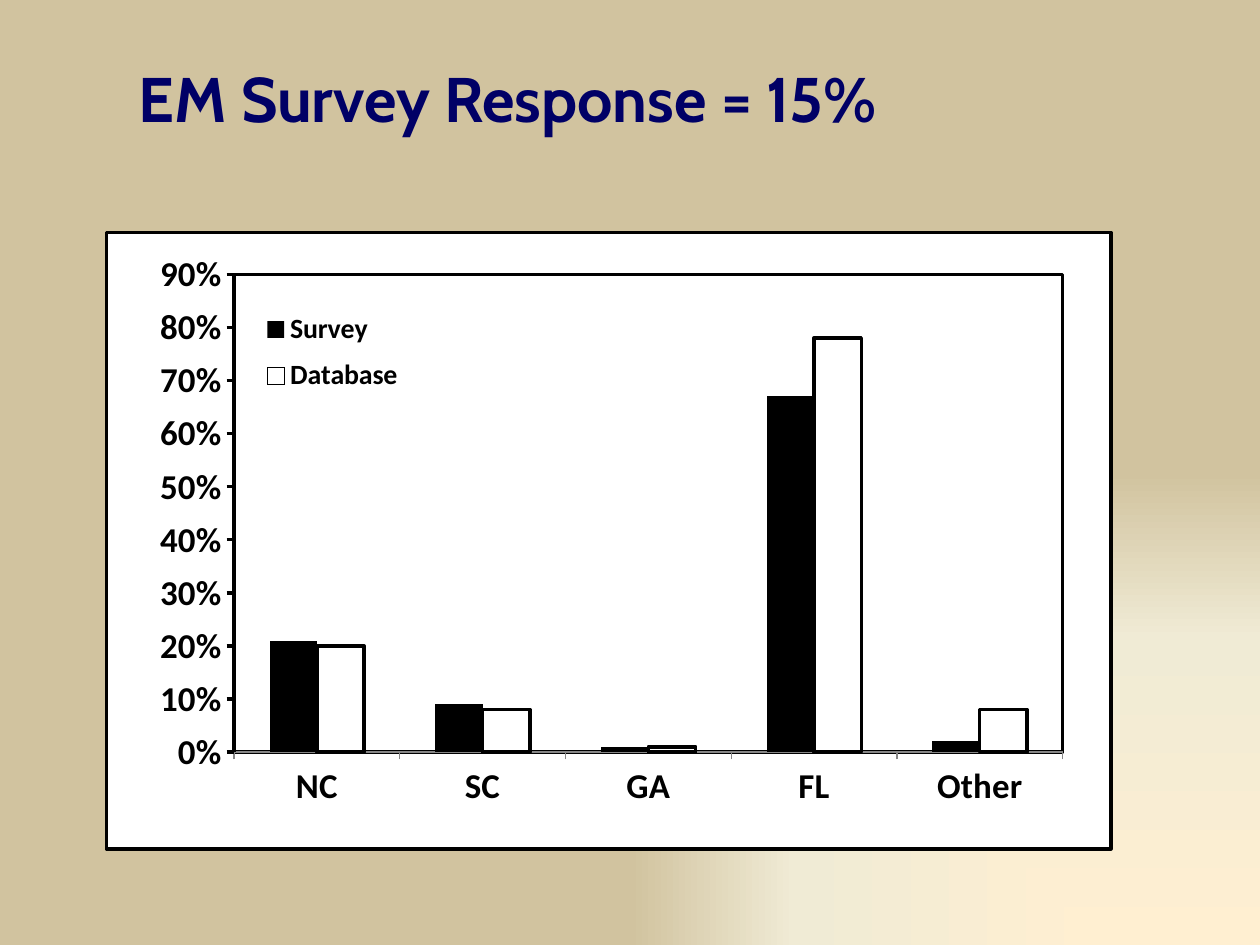
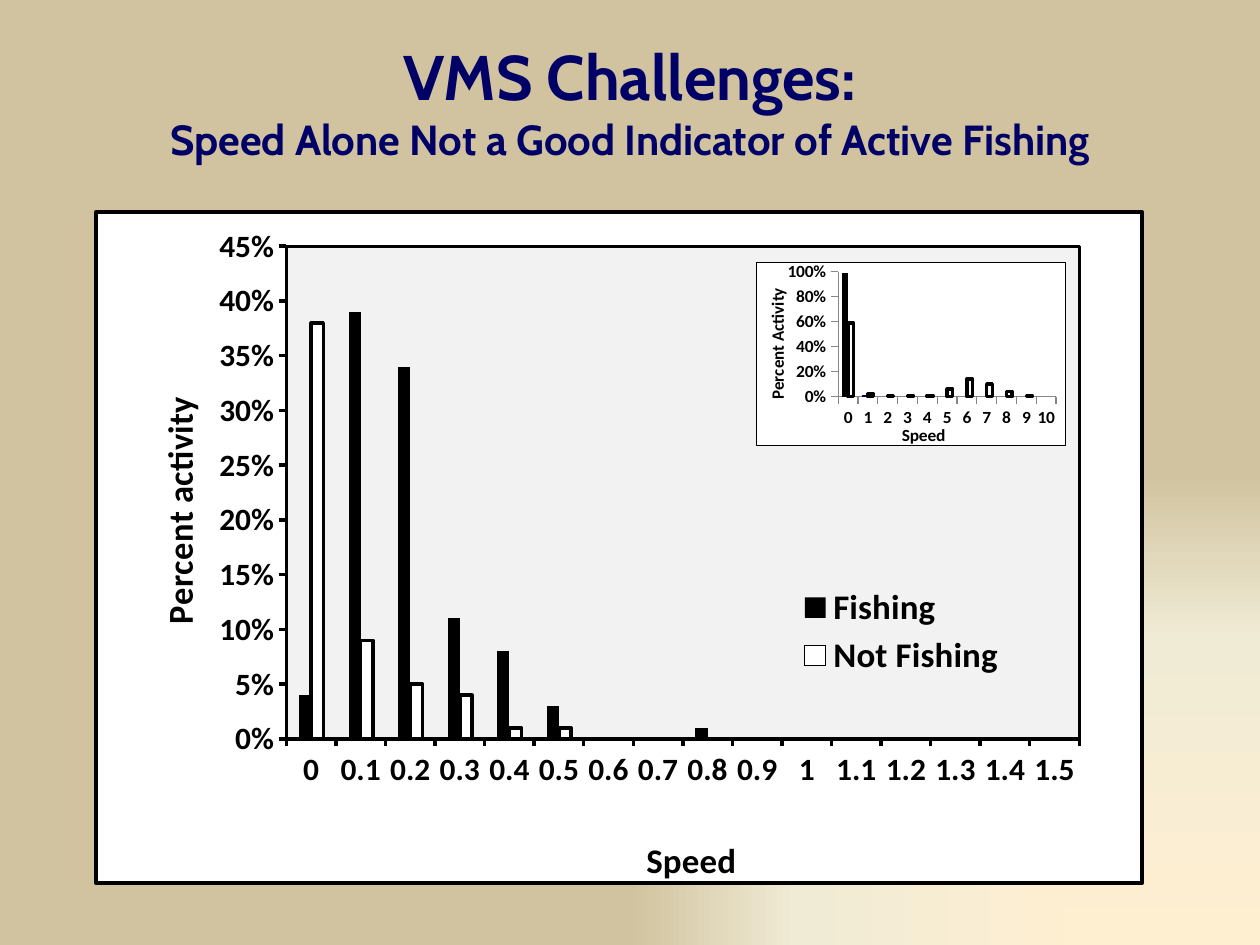
from pptx import Presentation, oxml
from pptx.chart import data as chart_data
from pptx.dml import color
from pptx.enum import chart as kinds, text
from pptx.oxml import ns
from pptx.util import Cm, Pt

COLOURS = {
    "navy": "000066", "black": "000000", "white": "FFFFFF", "plot": "F2F2F2",
    "axis": "868686", "glow": "FFEFD1", "cream": "F0EBD5", "sand": "D1C39F",
}
TITLE_FONT, LABEL_FONT, CHART_FONT = "Cabin", "Calibri", "Cambria"
HEAVY, THIN = 2, 0.75


def rgb(name):
    return color.RGBColor.from_string(COLOURS[name])


def set_font(font, size, name, bold=True, colour="black"):
    font.size, font.name, font.bold = Pt(size), name, bold
    font.color.rgb = rgb(colour)


def set_line(line, colour, width):
    line.color.rgb = rgb(colour)
    line.width = Pt(width)


def frame_xml(fill, width):
    """Shape properties of a chart or plot area with a black border."""
    paint = f'<a:solidFill><a:srgbClr val="{COLOURS[fill]}"/></a:solidFill>'
    border = (f'<a:ln w="{Pt(width)}"><a:solidFill><a:srgbClr val="{COLOURS["black"]}"/>'
              '</a:solidFill></a:ln>' if width else '<a:ln><a:noFill/></a:ln>')
    return oxml.parse_xml(f'<c:spPr {ns.nsdecls("c", "a")}>{paint}{border}</c:spPr>')


def place(element, index, x, y, w=None, h=None, inner=False):
    """Give a chart part a manual layout, in fractions of the chart."""
    for old in element.findall(ns.qn("c:layout")):
        element.remove(old)
    target = '<c:layoutTarget val="inner"/>' if inner else ""
    sizes = f'<c:w val="{w}"/><c:h val="{h}"/>' if w else ""
    element.insert(index, oxml.parse_xml(
        f'<c:layout {ns.nsdecls("c")}><c:manualLayout>{target}'
        '<c:xMode val="edge"/><c:yMode val="edge"/>'
        f'<c:x val="{x}"/><c:y val="{y}"/>{sizes}</c:manualLayout></c:layout>'))


class Deck:
    def __init__(self):
        self.deck = Presentation()
        self.deck.slide_width, self.deck.slide_height = Cm(25.4), Cm(19.05)
        self.page = None
        self.paint_background()

    def paint_background(self):
        master = self.deck.slide_master
        master.background.fill.solid()
        solid = master.element.find(".//" + ns.qn("p:bgPr")).find(ns.qn("a:solidFill"))
        stops = "".join(
            f'<a:gs pos="{place_at * 1000}"><a:srgbClr val="{COLOURS[name]}"/></a:gs>'
            for place_at, name in ((0, "glow"), (65, "cream"), (100, "sand")))
        solid.getparent().replace(solid, oxml.parse_xml(
            f'<a:gradFill {ns.nsdecls("a")} rotWithShape="1"><a:gsLst>{stops}</a:gsLst>'
            '<a:path path="rect"><a:fillToRect l="100000" t="100000"/></a:path></a:gradFill>'))

    def add_page(self, area, lines, align):
        """Start a slide whose title holds (words, size) lines."""
        self.page = self.deck.slides.add_slide(self.deck.slide_layouts[5])
        title = self.page.shapes.title
        title.left, title.top, title.width, title.height = map(Cm, area)
        frame = title.text_frame
        frame.word_wrap = True
        frame.auto_size = text.MSO_AUTO_SIZE.NONE
        frame.vertical_anchor = text.MSO_ANCHOR.TOP
        para = frame.paragraphs[0]
        para.alignment = align
        for number, (words, size) in enumerate(lines):
            if number:
                para.add_line_break()
            span = para.add_run()
            span.text = words
            set_font(span.font, size, TITLE_FONT, colour="navy")

    def add_columns(self, area, categories, series, plot, border=HEAVY,
                    plot_fill="white", plot_border=HEAVY, gap=150, overlap=0):
        """Add a column chart; series are (name, fill, values)."""
        source = chart_data.CategoryChartData(number_format="0%")
        source.categories = categories
        for name, _, values in series:
            source.add_series(name, values + [None] * (len(categories) - len(values)))
        chart = self.page.shapes.add_chart(
            kinds.XL_CHART_TYPE.COLUMN_CLUSTERED, *map(Cm, area), source).chart
        chart.has_title = chart.has_legend = False
        set_font(chart.font, 10, CHART_FONT, bold=False)
        bars = chart.plots[0]
        bars.gap_width, bars.overlap, bars.vary_by_categories = gap, overlap, False
        for column, (_, fill, _) in zip(bars.series, series):
            column.invert_if_negative = False
            column.format.fill.solid()
            column.format.fill.fore_color.rgb = rgb(fill)
            if fill == "white":
                set_line(column.format.line, "black", HEAVY)
        body = chart.element.find(ns.qn("c:chart"))
        body.addnext(frame_xml("white", border))
        plot_area = body.find(ns.qn("c:plotArea"))
        place(plot_area, 0, *plot, inner=True)
        plot_area.append(frame_xml(plot_fill, plot_border))
        return chart

    def style_axis(self, axis, size, line, title=None, title_size=None, title_at=None):
        axis.has_major_gridlines = False
        axis.major_tick_mark = kinds.XL_TICK_MARK.OUTSIDE
        axis.minor_tick_mark = kinds.XL_TICK_MARK.NONE
        set_font(axis.tick_labels.font, size, LABEL_FONT)
        set_line(axis.format.line, *line)
        if title:
            frame = axis.axis_title.text_frame
            frame.text = title
            set_font(frame.paragraphs[0].font, title_size, LABEL_FONT)
            place(axis.axis_title._element, 1, *title_at)

    def scale_axis(self, axis, top, step):
        axis.minimum_scale, axis.maximum_scale, axis.major_unit = 0, top, step
        axis.tick_labels.number_format = "0%"
        axis.tick_labels.number_format_is_linked = False

    def add_legend(self, chart, size, area, overlay):
        chart.has_legend = True
        legend = chart.legend
        legend.position = kinds.XL_LEGEND_POSITION.RIGHT
        legend.include_in_layout = overlay
        set_font(legend.font, size, LABEL_FONT)
        place(legend._element, 1, *area)


def build_survey(show):
    show.add_page((2.54, 1.07, 19.05, 1.7), [("EM Survey Response = 15%", 36)],
                  text.PP_ALIGN.LEFT)
    chart = show.add_columns(
        (2.11, 4.65, 20.32, 12.5), ["NC", "SC", "GA", "FL", "Other"],
        [("Survey", "black", [0.21, 0.09, 0.01, 0.67, 0.02]),
         ("Database", "white", [0.2, 0.08, 0.01, 0.78, 0.08])],
        plot=(0.127, 0.068, 0.825, 0.775))
    show.style_axis(chart.category_axis, 20, ("axis", THIN))
    show.style_axis(chart.value_axis, 20, ("black", HEAVY))
    show.scale_axis(chart.value_axis, 0.9, 0.1)
    show.add_legend(chart, 16, (0.15, 0.11, 0.15, 0.17), overlay=True)


def build_speed(show):
    show.add_page((0, 0.63, 25.4, 1.7),
                  [("VMS Challenges:", 36),
                   ("Speed Alone Not a Good Indicator of Active Fishing", 24)],
                  text.PP_ALIGN.CENTER)
    chart = show.add_columns(
        (1.9, 4.24, 21.16, 13.76), [f"{tenth / 10:g}" for tenth in range(16)],
        [("Fishing", "black",
          [0.04, 0.39, 0.34, 0.11, 0.08, 0.03, None, None, 0.01]),
         ("Not Fishing", "white",
          [0.38, 0.09, 0.05, 0.04, 0.01, 0.01, 0, 0, 0, None, 0])],
        plot=(0.182, 0.051, 0.758, 0.734), plot_fill="plot", gap=210, overlap=-1)
    heavy = ("black", HEAVY)
    show.style_axis(chart.category_axis, 18, heavy, "Speed", 20, (0.52, 0.92))
    show.style_axis(chart.value_axis, 18, heavy, "Percent activity", 20, (0.05, 0.27))
    show.scale_axis(chart.value_axis, 0.45, 0.05)
    show.add_legend(chart, 20, (0.67, 0.55, 0.2, 0.15), overlay=False)

    inset = show.add_columns(
        (15.24, 5.28, 6.25, 3.81), [str(speed) for speed in range(11)],
        [("Series 1", "navy", [0.99, 0.01]),
         ("Series 2", "white",
          [0.59, 0.02, 0.01, 0.01, 0.01, 0.06, 0.14, 0.1, 0.04, 0.01])],
        plot=(0.264, 0.051, 0.706, 0.683), border=THIN, plot_border=0)
    first_bar = inset.plots[0].series[0].points[0].format.fill
    first_bar.solid()
    first_bar.fore_color.rgb = rgb("black")
    thin = ("axis", THIN)
    show.style_axis(inset.category_axis, 10, thin, "Speed", 10, (0.46, 0.87))
    show.style_axis(inset.value_axis, 10, thin, "Percent Activity", 10, (0.02, 0.14))
    show.scale_axis(inset.value_axis, 1, 0.2)


def main():
    show = Deck()
    build_survey(show)
    build_speed(show)
    show.deck.save("out.pptx")


if __name__ == "__main__":
    main()
